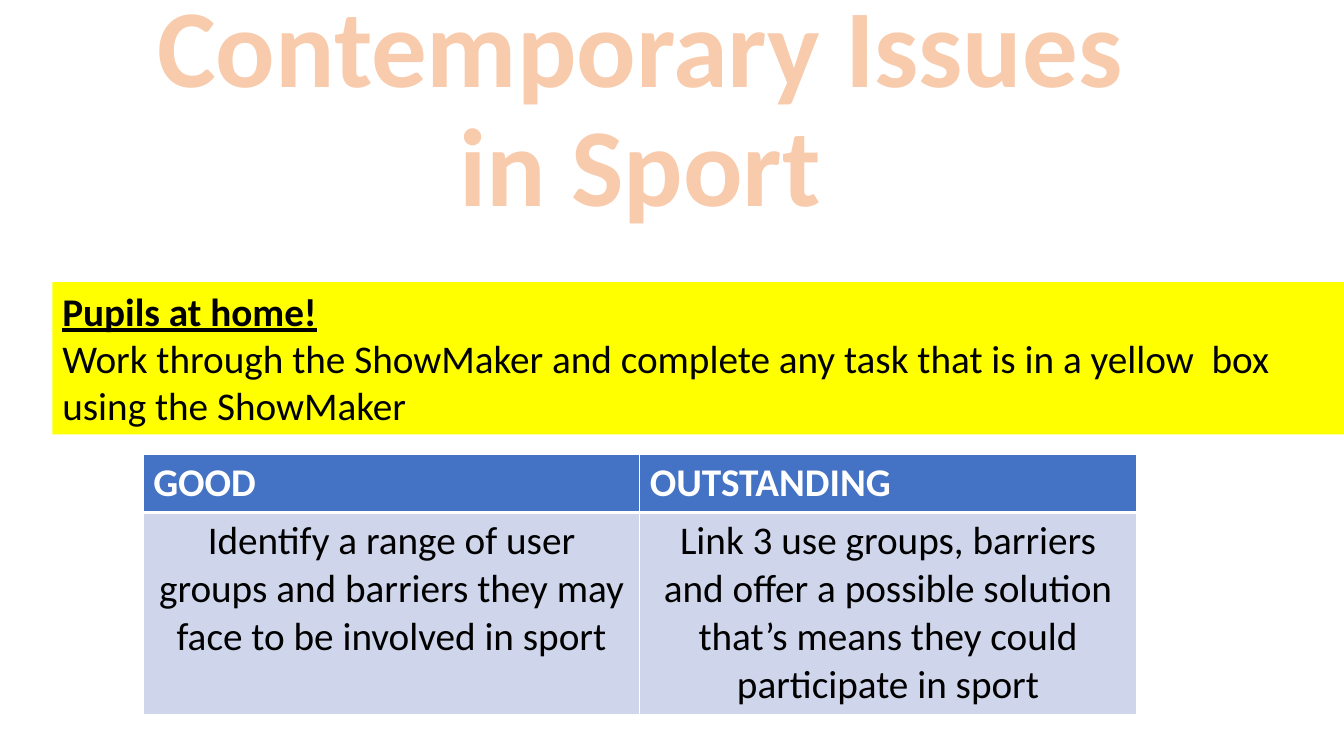
import pptx
import pptx.dml.color
import pptx.enum.shapes
import pptx.enum.text
import pptx.oxml
import pptx.oxml.ns
import pptx.util

ALIGN = pptx.enum.text.PP_ALIGN
ANCHOR = pptx.enum.text.MSO_ANCHOR
WIDTH, HEIGHT = 13.33, 7.5
GOALS = [
    ("GOOD", "Identify a range of user groups and barriers they may face to be involved in sport"),
    ("OUTSTANDING", "Link 3 use groups, barriers and offer a possible solution "
                    "that’s means they could participate in sport"),
]


def box(left, top, width, height):
    return [pptx.util.Inches(v) for v in (left, top, width, height)]


def color(hex_code):
    return pptx.dml.color.RGBColor.from_string(hex_code)


def fill(obj, hex_code):
    obj.fill.solid()
    obj.fill.fore_color.rgb = color(hex_code)


def write(p, text, size=28, rgb="000000", bold=False, underline=False, align=ALIGN.LEFT):
    p.alignment = align
    r = p.add_run()
    r.text = text
    r.font.name = "Calibri"
    r.font.size = pptx.util.Pt(size)
    r.font.bold = bold
    r.font.underline = underline
    r.font.color.rgb = color(rgb)
    return r


def add_line(parent, tag, index, hex_code, width):
    ln = pptx.oxml.parse_xml(
        f'<a:{tag} {pptx.oxml.ns.nsdecls("a")} w="{pptx.util.Pt(width)}">'
        f'<a:solidFill><a:srgbClr val="{hex_code}"/></a:solidFill></a:{tag}>')
    parent.insert(index, ln)


def add_title(s, text):
    sp = s.shapes.title
    sp.left, sp.top, sp.width, sp.height = box(1.35, -0.27, 10, 2.61)
    tf = sp.text_frame
    tf.word_wrap = True
    tf.auto_size = pptx.enum.text.MSO_AUTO_SIZE.NONE
    tf.vertical_anchor = ANCHOR.BOTTOM
    p = tf.paragraphs[0]
    p.line_spacing = 0.9
    r = write(p, text, size=79.2, rgb="F8CBAD", bold=True, align=ALIGN.CENTER)
    add_line(r.font._element, "ln", 0, "ED7D31", 1.75)


def add_task(s, heading, task):
    sp = s.shapes.add_shape(pptx.enum.shapes.MSO_SHAPE.RECTANGLE, *box(0.52, 2.8, 12.92, 1.51))
    sp.shadow.inherit = False
    fill(sp, "FFFF00")
    sp.line.fill.background()
    tf = sp.text_frame
    tf.word_wrap = True
    tf.vertical_anchor = ANCHOR.TOP
    write(tf.paragraphs[0], heading, bold=True, underline=True)
    write(tf.add_paragraph(), task)


def add_cell(cell, text, fill_hex, top, bottom, **fmt):
    fill(cell, fill_hex)
    write(cell.text_frame.paragraphs[0], text, **fmt)
    tcPr = cell._tc.get_or_add_tcPr()
    borders = {"lnL": 1, "lnR": 1, "lnT": top, "lnB": bottom}
    for i, (tag, width) in enumerate(borders.items()):
        add_line(tcPr, tag, i, "FFFFFF", width)


def add_goals(s):
    table = s.shapes.add_table(2, len(GOALS), *box(1.42, 4.51, 9.85, 2.53)).table
    table.rows[0].height = pptx.util.Inches(0.57)
    table.rows[1].height = pptx.util.Inches(1.96)
    for col, (level, goal) in enumerate(GOALS):
        add_cell(table.cell(0, col), level, "4472C4", 1, 3, rgb="FFFFFF", bold=True)
        add_cell(table.cell(1, col), goal, "CFD5EA", 3, 1, align=ALIGN.CENTER)


def main():
    prs = pptx.Presentation()
    prs.slide_width = pptx.util.Inches(WIDTH)
    prs.slide_height = pptx.util.Inches(HEIGHT)
    s = prs.slides.add_slide(prs.slide_layouts[0])
    subtitle = s.placeholders[1]._element
    subtitle.getparent().remove(subtitle)
    add_title(s, "Contemporary Issues in Sport")
    add_goals(s)
    add_task(s, "Pupils at home!",
             "Work through the ShowMaker and complete any task that is in a yellow  box "
             "using the ShowMaker")
    prs.save("out.pptx")


if __name__ == "__main__":
    main()
